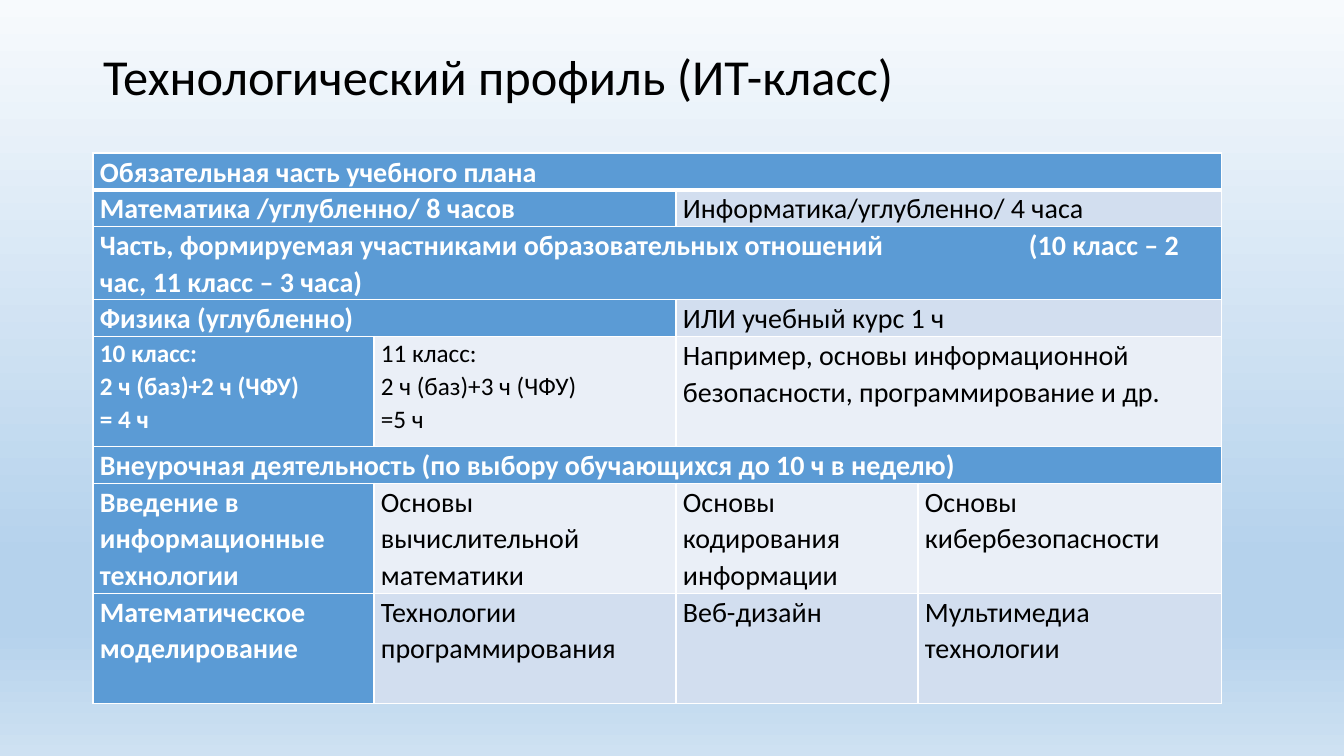
import dataclasses

import lxml.etree
import pptx
import pptx.dml.color
import pptx.enum.text
import pptx.oxml.ns
import pptx.slide
import pptx.table
import pptx.text.text
import pptx.util

EMU_PER_PX = 914400 / 100.8


@dataclasses.dataclass(frozen=True)
class Theme:
    font: str = "Calibri"
    title_size: int = 36
    body_size: int = 20
    small_size: int = 18
    dark: str = "000000"
    light: str = "FFFFFF"
    accent: str = "5B9BD5"
    bands: tuple[str, str] = ("EAEFF7", "D2DEEF")
    border: int = 1
    header_border: int = 3
    backdrop: tuple[tuple[int, str], ...] = (
        (0, "F7FAFD"), (74, "B5D2EC"), (83, "B5D2EC"), (100, "CEE1F2"))


@dataclasses.dataclass(frozen=True)
class Entry:
    text: str
    span: int = 1
    size: int = Theme.body_size


@dataclasses.dataclass(frozen=True)
class PlanRow:
    height: int
    entries: tuple[Entry, ...]


THEME = Theme()
COLUMN_WIDTHS = (281, 302, 242, 304)
LINE, DOUBLE, BLOCK = 36, 73, 110
HOURS_TAB = 929

PLAN = (
    PlanRow(LINE, (Entry("Обязательная часть учебного плана", 4),)),
    PlanRow(LINE, (Entry("Математика /углубленно/ 8 часов", 2),
                   Entry("Информатика/углубленно/ 4 часа", 2))),
    PlanRow(DOUBLE, (Entry("Часть, формируемая участниками образовательных отношений\t"
                           "(10 класс – 2 час, 11 класс – 3 часа)", 4),)),
    PlanRow(LINE, (Entry("Физика (углубленно)", 2), Entry("ИЛИ учебный курс 1 ч", 2))),
    PlanRow(BLOCK, (Entry("10 класс:\n2 ч (баз)+2 ч (ЧФУ)\n= 4 ч", size=THEME.small_size),
                    Entry("11 класс:\n2 ч (баз)+3 ч (ЧФУ)\n=5 ч", size=THEME.small_size),
                    Entry("Например, основы информационной безопасности, "
                          "программирование и др.", 2))),
    PlanRow(LINE, (Entry("Внеурочная деятельность (по выбору обучающихся до 10 ч в неделю)", 4),)),
    PlanRow(BLOCK, (Entry("Введение в информационные технологии"),
                    Entry("Основы вычислительной математики"),
                    Entry("Основы кодирования информации"),
                    Entry("Основы кибербезопасности"))),
    PlanRow(BLOCK, (Entry("Математическое моделирование"),
                    Entry("Технологии программирования"),
                    Entry("Веб-дизайн"),
                    Entry("Мультимедиа технологии"))),
)


def px(length: int) -> pptx.util.Emu:
    return pptx.util.Emu(round(length * EMU_PER_PX))


def add_element(parent: lxml.etree._Element, tag: str, **attributes: str) -> lxml.etree._Element:
    return lxml.etree.SubElement(parent, pptx.oxml.ns.qn(tag), attributes)


def format_text(frame: pptx.text.text.TextFrame, size: int, color: str,
                bold: bool, spacing: float) -> None:
    for paragraph in frame.paragraphs:
        paragraph.alignment = pptx.enum.text.PP_ALIGN.LEFT
        paragraph.line_spacing = spacing
        for run in paragraph.runs:
            run.font.name = THEME.font
            run.font.size = pptx.util.Pt(size)
            run.font.bold = bold
            run.font.color.rgb = pptx.dml.color.RGBColor.from_string(color)


def paint_background(slide: pptx.slide.Slide) -> None:
    fill = slide.background.fill
    fill.gradient()
    fill.gradient_angle = 270
    stops = next(slide.element.iter(pptx.oxml.ns.qn("a:gsLst")))
    for stop in list(stops):
        stops.remove(stop)
    for percent, color in THEME.backdrop:
        stop = add_element(stops, "a:gs", pos=str(percent * 1000))
        add_element(stop, "a:srgbClr", val=color)


def place_title(slide: pptx.slide.Slide, text: str) -> None:
    title = slide.shapes.title
    title.left, title.top, title.width, title.height = px(93), px(40), px(1159), px(146)
    frame = title.text_frame
    frame.text = text
    frame.auto_size = pptx.enum.text.MSO_AUTO_SIZE.NONE
    frame.vertical_anchor = pptx.enum.text.MSO_ANCHOR.TOP
    frame.margin_top = px(12)
    format_text(frame, THEME.title_size, THEME.dark, False, 0.9)


def draw_borders(cell: pptx.table._Cell, row: int) -> None:
    properties = cell._tc.get_or_add_tcPr()
    for side in "LRTB":
        heavy = (row, side) in ((0, "B"), (1, "T"))
        points = THEME.header_border if heavy else THEME.border
        line = add_element(properties, f"a:ln{side}", w=str(pptx.util.Pt(points)))
        add_element(add_element(line, "a:solidFill"), "a:srgbClr", val=THEME.light)


def fill_cell(cell: pptx.table._Cell, entry: Entry, row: int, column: int) -> None:
    heading = column == 0
    cell.margin_left = cell.margin_right = px(7)
    cell.margin_top = cell.margin_bottom = 0
    cell.fill.solid()
    cell.fill.fore_color.rgb = pptx.dml.color.RGBColor.from_string(
        THEME.accent if heading else THEME.bands[row % 2])
    cell.text_frame.text = entry.text
    format_text(cell.text_frame, entry.size,
                THEME.light if heading else THEME.dark, heading, 1.07)
    if "\t" in entry.text:
        properties = cell.text_frame.paragraphs[0]._p.get_or_add_pPr()
        tabs = add_element(properties, "a:tabLst")
        add_element(tabs, "a:tab", pos=str(px(HOURS_TAB)), algn="l")


def add_plan_table(slide: pptx.slide.Slide) -> None:
    height = sum(plan_row.height for plan_row in PLAN)
    table = slide.shapes.add_table(len(PLAN), len(COLUMN_WIDTHS), px(93), px(153),
                                   px(sum(COLUMN_WIDTHS)), px(height)).table
    for table_column, width in zip(table.columns, COLUMN_WIDTHS):
        table_column.width = px(width)
    for row, plan_row in enumerate(PLAN):
        table.rows[row].height = px(plan_row.height)
        for column in range(len(COLUMN_WIDTHS)):
            draw_borders(table.cell(row, column), row)
        column = 0
        for entry in plan_row.entries:
            cell = table.cell(row, column)
            if entry.span > 1:
                cell.merge(table.cell(row, column + entry.span - 1))
            fill_cell(cell, entry, row, column)
            column += entry.span


def main() -> None:
    presentation = pptx.Presentation()
    presentation.slide_width, presentation.slide_height = px(1344), px(756)
    slide = presentation.slides.add_slide(presentation.slide_layouts.get_by_name("Title Only"))
    paint_background(slide)
    place_title(slide, "Технологический профиль (ИТ-класс)")
    add_plan_table(slide)
    presentation.save("out.pptx")


if __name__ == "__main__":
    main()
